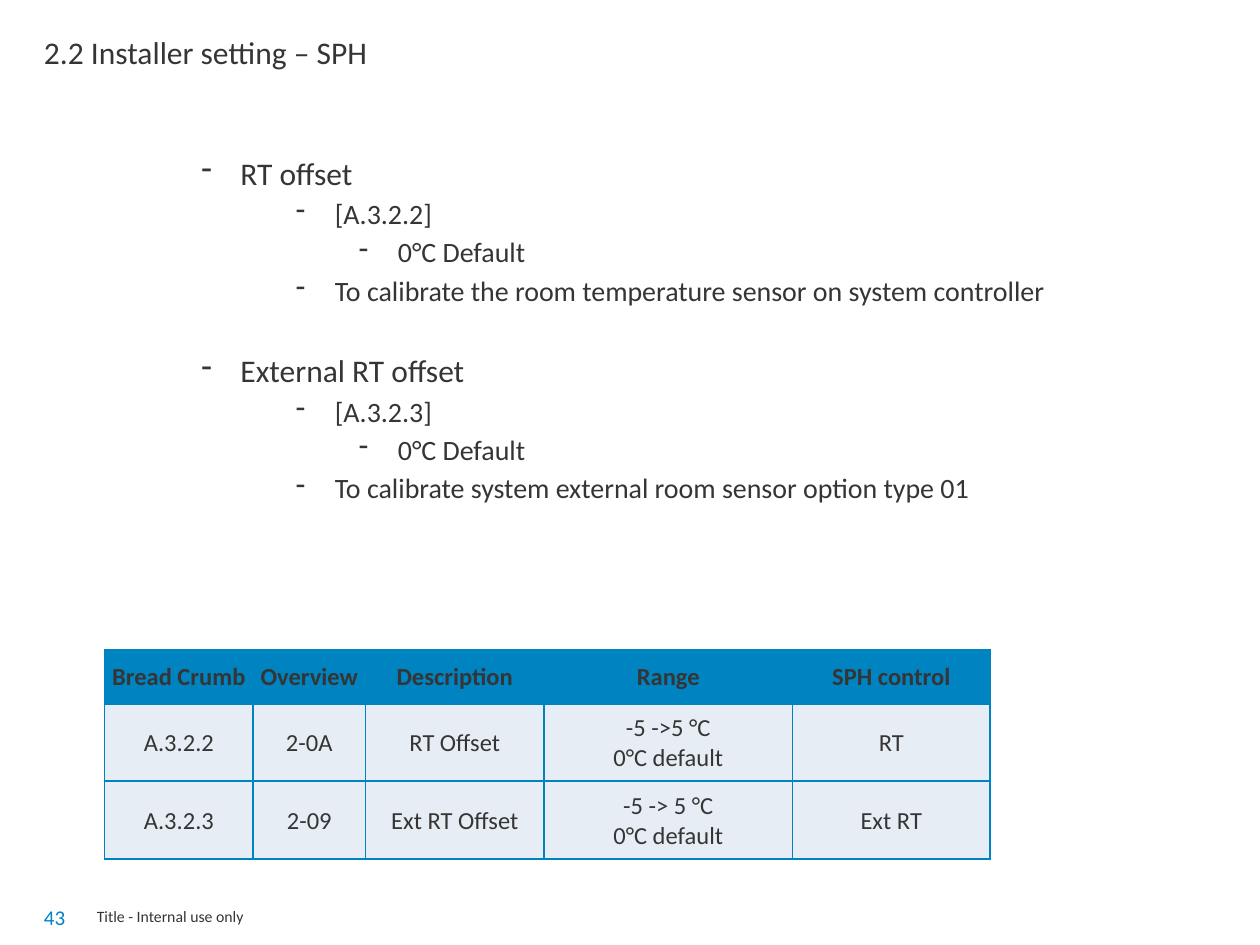
from lxml.etree import SubElement
from pptx import Presentation
from pptx.dml.color import RGBColor
from pptx.enum.text import MSO_ANCHOR as Anchor, PP_ALIGN as Align
from pptx.oxml.ns import qn
from pptx.util import Inches, Pt

FONT = "Calibri"
DARK, BLUE, PALE = "353535", "0083C1", "E7EDF4"
HANGING = 0.31

# Outline level: (left margin in inches, text size in points)
LEVELS = {1: (0.31, 18), 2: (1.06, 16), 3: (1.56, 16)}
SETTINGS = [
    (1, "RT offset"),
    (2, "[A.3.2.2]"),
    (3, "0°C Default"),
    (2, "To calibrate the room temperature sensor on system controller"),
    (1, "External RT offset"),
    (2, "[A.3.2.3]"),
    (3, "0°C Default"),
    (2, "To calibrate system external room sensor option type 01"),
]
COLUMN_WIDTHS = [1.18, 0.89, 1.42, 1.97, 1.57]
ROW_HEIGHTS = [0.42, 0.62, 0.62]
TABLE_ROWS = [
    ["Bread Crumb", "Overview", "Description", "Range", "SPH control"],
    ["A.3.2.2", "2-0A", "RT Offset", "-5 ->5 °C\n0°C default", "RT"],
    ["A.3.2.3", "2-09", "Ext RT Offset", "-5 -> 5 °C\n0°C default", "Ext RT"],
]


def color(value):
    return RGBColor.from_string(value)


def write(para, text, size, ink=DARK, bold=False, align=Align.LEFT, before=0):
    para.alignment = align
    para.space_before = Pt(before)
    span = para.add_run()
    span.text = text
    span.font.name = FONT
    span.font.size = Pt(size)
    span.font.bold = bold
    span.font.color.rgb = color(ink)


def add_text_frame(page, box, anchor=Anchor.TOP):
    frame = page.shapes.add_textbox(*map(Inches, box)).text_frame
    frame.word_wrap = True
    frame.vertical_anchor = anchor
    return frame


def add_dash(para, margin):
    properties = para._p.get_or_add_pPr()
    properties.set("marL", str(Inches(margin)))
    properties.set("indent", str(-Inches(HANGING)))
    SubElement(properties, qn("a:buChar"), char="-")


def add_title(page, box):
    write(add_text_frame(page, box).paragraphs[0], "2.2 Installer setting – SPH", 18)


def add_outline(page, box):
    frame = add_text_frame(page, box)
    for index, (level, text) in enumerate(SETTINGS):
        para = frame.add_paragraph() if index else frame.paragraphs[0]
        margin, size = LEVELS[level]
        add_dash(para, margin)
        if index == 0:
            before = 0
        else:
            before = 25.4 if level == 1 else 2.8
        write(para, text, size, before=before)


def add_borders(cell, bottom_width):
    properties = cell._tc.get_or_add_tcPr()
    for side in "LRTB":
        width = bottom_width if side == "B" else 1
        line = SubElement(properties, qn(f"a:ln{side}"), w=str(Pt(width)))
        SubElement(SubElement(line, qn("a:solidFill")), qn("a:srgbClr"), val=BLUE)


def fill_cell(cell, text, is_header):
    add_borders(cell, 3 if is_header else 1)
    cell.fill.solid()
    cell.fill.fore_color.rgb = color(BLUE if is_header else PALE)
    cell.margin_left = cell.margin_right = Inches(0.04)
    cell.margin_top, cell.margin_bottom = Inches(0.01), 0
    cell.vertical_anchor = Anchor.MIDDLE
    for index, line in enumerate(text.split("\n")):
        para = cell.text_frame.add_paragraph() if index else cell.text_frame.paragraphs[0]
        write(para, line, 14, bold=is_header, align=Align.CENTER)


def add_settings_table(page, left, top):
    box = (left, top, sum(COLUMN_WIDTHS), sum(ROW_HEIGHTS))
    table = page.shapes.add_table(
        len(ROW_HEIGHTS), len(COLUMN_WIDTHS), *map(Inches, box)).table
    table.horz_banding = False
    for column, width in zip(table.columns, COLUMN_WIDTHS):
        column.width = Inches(width)
    for index, (row, height) in enumerate(zip(table.rows, ROW_HEIGHTS)):
        row.height = Inches(height)
        for cell, text in zip(row.cells, TABLE_ROWS[index]):
            fill_cell(cell, text, is_header=index == 0)


def add_footer(page, left, top):
    number = add_text_frame(page, (left, top, 0.42, 0.55), Anchor.MIDDLE)
    write(number.paragraphs[0], "43", 12, ink=BLUE)
    label = add_text_frame(page, (left + 0.42, top + 0.07, 3.17, 0.4), Anchor.MIDDLE)
    write(label.paragraphs[0], "Title - Internal use only", 9)


def main():
    deck = Presentation()
    deck.slide_width, deck.slide_height = Inches(10), Inches(7.5)
    page = deck.slides.add_slide(deck.slide_layouts[6])
    add_footer(page, 0.25, 7)
    add_title(page, (0.25, 0.21, 9.48, 0.65))
    add_outline(page, (1.5, 1.17, 7, 5.33))
    add_settings_table(page, 0.83, 5.16)
    deck.save("out.pptx")


if __name__ == "__main__":
    main()
